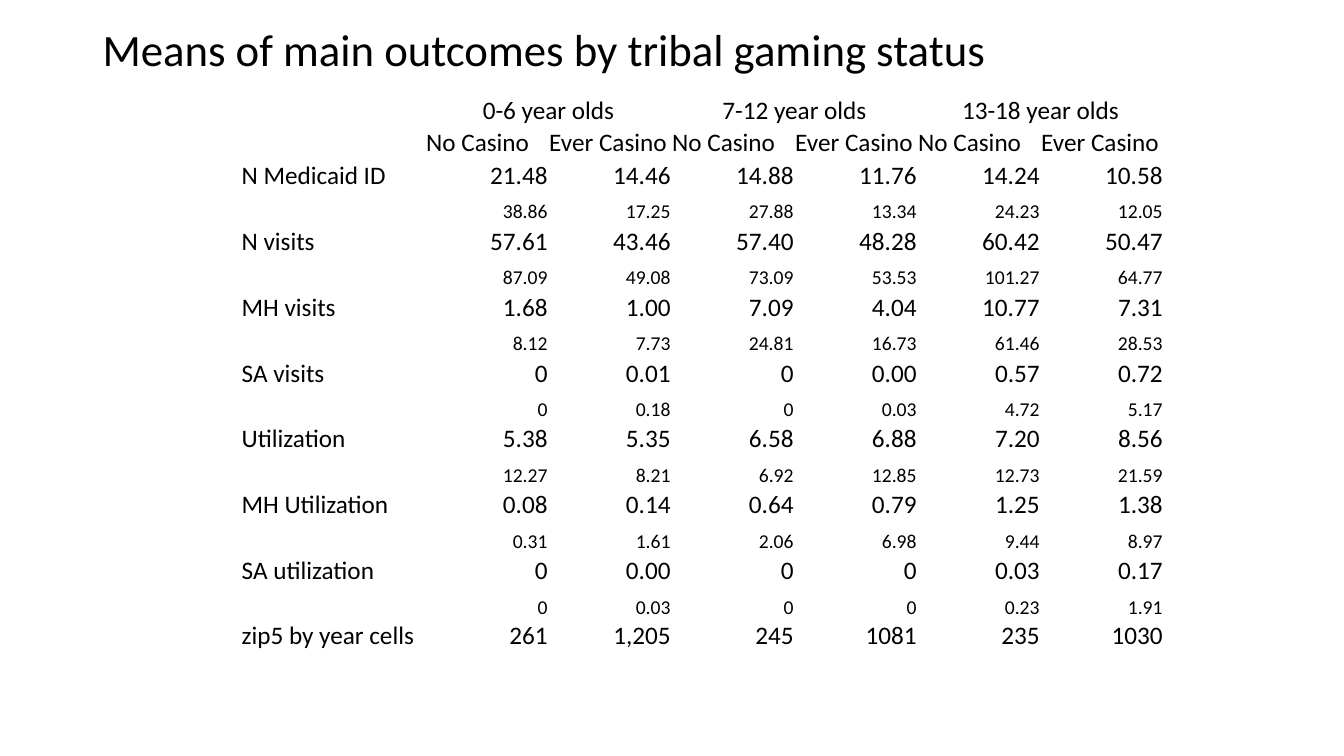
import pptx
import pptx.dml.color
import pptx.enum.text
import pptx.oxml
import pptx.oxml.ns
import pptx.util

Cm, Pt = pptx.util.Cm, pptx.util.Pt
ALIGN = pptx.enum.text.PP_ALIGN
ANCHOR = pptx.enum.text.MSO_ANCHOR
FONT = "Calibri"
BLACK, WHITE = "000000", "FFFFFF"

AGE_GROUPS = ["0-6 year olds", "7-12 year olds", "13-18 year olds"]
CASINO_STATUS = ["No Casino", "Ever Casino"]
# Outcome, means, standard deviations
OUTCOMES = [
    ("N Medicaid ID", "21.48 14.46 14.88 11.76 14.24 10.58", "38.86 17.25 27.88 13.34 24.23 12.05"),
    ("N visits", "57.61 43.46 57.40 48.28 60.42 50.47", "87.09 49.08 73.09 53.53 101.27 64.77"),
    ("MH visits", "1.68 1.00 7.09 4.04 10.77 7.31", "8.12 7.73 24.81 16.73 61.46 28.53"),
    ("SA visits", "0 0.01 0 0.00 0.57 0.72", "0 0.18 0 0.03 4.72 5.17"),
    ("Utilization", "5.38 5.35 6.58 6.88 7.20 8.56", "12.27 8.21 6.92 12.85 12.73 21.59"),
    ("MH Utilization", "0.08 0.14 0.64 0.79 1.25 1.38", "0.31 1.61 2.06 6.98 9.44 8.97"),
    ("SA utilization", "0 0.00 0 0 0.03 0.17", "0 0.03 0 0 0.23 1.91"),
]
CELL_COUNTS = ("zip5 by year cells", "261 1,205 245 1081 235 1030")


def rgb(color):
    return pptx.dml.color.RGBColor.from_string(color)


def add_run(p, text, size):
    r = p.add_run()
    r.text = text
    r.font.name = FONT
    r.font.size = Pt(size)
    r.font.color.rgb = rgb(BLACK)


def add_title(slide, text, left, top, width, height):
    sp = slide.shapes.title
    sp.left, sp.top, sp.width, sp.height = left, top, width, height
    tf = sp.text_frame
    tf.word_wrap = True
    tf.vertical_anchor = ANCHOR.MIDDLE
    p = tf.paragraphs[0]
    p.alignment = ALIGN.LEFT
    p.line_spacing = 0.9
    add_run(p, text, 32)


def format_cell(cell):
    cell.vertical_anchor = ANCHOR.BOTTOM
    cell.margin_left = cell.margin_right = cell.margin_top = Cm(0.02)
    cell.margin_bottom = 0
    tc_pr = cell._tc.get_or_add_tcPr()
    for side in ("lnL", "lnR", "lnT", "lnB"):
        tc_pr.append(pptx.oxml.parse_xml(
            f'<a:{side} {pptx.oxml.ns.nsdecls("a")} w="{Pt(1)}"><a:solidFill>'
            f'<a:srgbClr val="{WHITE}"/></a:solidFill></a:{side}>'))
    cell.fill.background()


def fill_cell(cell, text, align, size=18):
    p = cell.text_frame.paragraphs[0]
    p.alignment = align
    add_run(p, text, size)


def add_outcome_table(slide, left, top, width, height):
    """Two header rows, a mean and a deviation row per outcome, then cell counts."""
    n_rows = 2 * len(OUTCOMES) + 3
    n_cols = 1 + len(AGE_GROUPS) * len(CASINO_STATUS)
    table = slide.shapes.add_table(n_rows, n_cols, left, top, width, height).table
    table.first_row = table.horz_banding = False

    label_width = Cm(4.65)
    for i, column in enumerate(table.columns):
        column.width = label_width if i == 0 else (width - label_width) // (n_cols - 1)
    for row in table.rows:
        row.height = Cm(0.83)
    table.rows[1].height = Cm(0.71)
    table.rows[n_rows - 1].height = Cm(0.64)
    for cell in table.iter_cells():
        format_cell(cell)

    for i, group in enumerate(AGE_GROUPS):
        col = 1 + i * len(CASINO_STATUS)
        table.cell(0, col).merge(table.cell(0, col + 1))
        fill_cell(table.cell(0, col), group, ALIGN.CENTER)
        for j, status in enumerate(CASINO_STATUS):
            fill_cell(table.cell(1, col + j), status, ALIGN.LEFT)

    lines = []
    for label, means, deviations in OUTCOMES:
        lines += [(label, means, 18), ("", deviations, 14)]
    lines.append((*CELL_COUNTS, 18))
    for row, (label, values, size) in enumerate(lines, 2):
        if label:
            fill_cell(table.cell(row, 0), label, ALIGN.LEFT)
        for col, value in enumerate(values.split(), 1):
            fill_cell(table.cell(row, col), value, ALIGN.RIGHT, size)


def main():
    prs = pptx.Presentation()
    prs.slide_width, prs.slide_height = Cm(33.87), Cm(19.05)
    slide = prs.slides.add_slide(prs.slide_layouts[5])
    add_title(slide, "Means of main outcomes by tribal gaming status",
              Cm(2.33), Cm(0.3), Cm(29.21), Cm(2.03))
    add_outcome_table(slide, Cm(6.07), Cm(2.36), Cm(23.25), Cm(13.8))
    prs.save("out.pptx")


if __name__ == "__main__":
    main()
